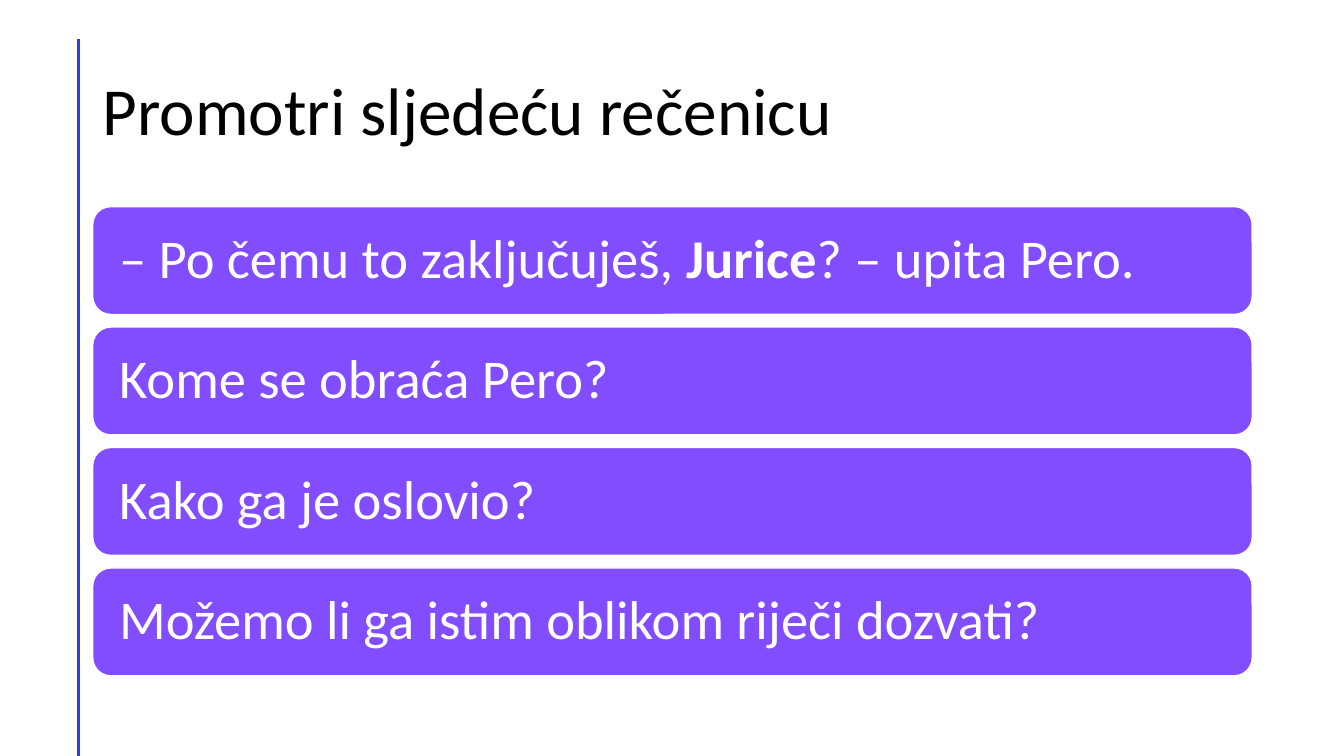
from pptx import Presentation
from pptx.dml.color import RGBColor
from pptx.enum.shapes import MSO_CONNECTOR, MSO_SHAPE
from pptx.enum.text import MSO_ANCHOR, PP_ALIGN
from pptx.oxml.ns import qn
from pptx.util import Inches, Pt
from lxml import etree

STRAIGHT = MSO_CONNECTOR.STRAIGHT
ROUNDED = MSO_SHAPE.ROUNDED_RECTANGLE
MIDDLE = MSO_ANCHOR.MIDDLE
LEFT = PP_ALIGN.LEFT

TITLE = "Promotri sljedeću rečenicu"
# Each bar is a list of (text, bold) spans
BARS = [
    [("– Po čemu to zaključuješ, ", False), ("Jurice", True), ("? – upita Pero.", False)],
    [("Kome se obraća Pero?", False)],
    [("Kako ga je oslovio?", False)],
    [("Možemo li ga istim oblikom riječi dozvati?", False)],
]

FONT = "Calibri"
BLACK, WHITE, PURPLE, BLUE = "000000", "FFFFFF", "814DFF", "2B3FDF"
SLIDE_WIDTH, SLIDE_HEIGHT = 13.33, 7.5
MARGIN, CONTENT_WIDTH = 0.92, 11.5
TITLE_TOP, TITLE_HEIGHT = 0.4, 1.45
BARS_TOP, BAR_HEIGHT, BAR_PITCH = 2.05, 1.07, 1.195
BAR_INSET = 0.21
RULE_LEFT, RULE_TOP = 0.78, 0.39


def color(value):
    return RGBColor.from_string(value)


def style_paragraph(para, size, text_color):
    para.alignment = LEFT
    para.line_spacing = 0.9
    para.font.name = FONT
    para.font.size = Pt(size)
    para.font.color.rgb = color(text_color)


def add_rule(page):
    """Draw the vertical line along the left margin."""
    rule = page.shapes.add_connector(
        STRAIGHT, Inches(RULE_LEFT), Inches(RULE_TOP), Inches(RULE_LEFT), Inches(SLIDE_HEIGHT))
    rule.line.color.rgb = color(BLUE)
    rule.line.width = Pt(2)
    etree.SubElement(rule._element.spPr, qn("a:effectLst"))


def fill_title(page):
    title = page.shapes.title
    title.left, title.top = Inches(MARGIN), Inches(TITLE_TOP)
    title.width, title.height = Inches(CONTENT_WIDTH), Inches(TITLE_HEIGHT)
    title.text_frame.text = TITLE
    title.text_frame.vertical_anchor = MIDDLE
    style_paragraph(title.text_frame.paragraphs[0], 48, BLACK)


def add_bar(page, row, spans):
    box = page.shapes.add_shape(
        ROUNDED, Inches(MARGIN), Inches(BARS_TOP + row * BAR_PITCH),
        Inches(CONTENT_WIDTH), Inches(BAR_HEIGHT))
    box.shadow.inherit = False
    box.fill.solid()
    box.fill.fore_color.rgb = color(PURPLE)
    box.line.color.rgb = color(WHITE)
    box.line.width = Pt(1)
    frame = box.text_frame
    frame.word_wrap = True
    frame.vertical_anchor = MIDDLE
    frame.margin_left = frame.margin_right = Inches(BAR_INSET)
    frame.margin_top = frame.margin_bottom = Inches(BAR_INSET)
    para = frame.paragraphs[0]
    style_paragraph(para, 39, WHITE)
    for text, bold in spans:
        span = para.add_run()
        span.text = text
        span.font.bold = bold


def main():
    deck = Presentation()
    deck.slide_width, deck.slide_height = Inches(SLIDE_WIDTH), Inches(SLIDE_HEIGHT)
    title_only = deck.slide_layouts[5]
    page = deck.slides.add_slide(title_only)
    add_rule(page)
    fill_title(page)
    for row, spans in enumerate(BARS):
        add_bar(page, row, spans)
    deck.save("out.pptx")


if __name__ == "__main__":
    main()
